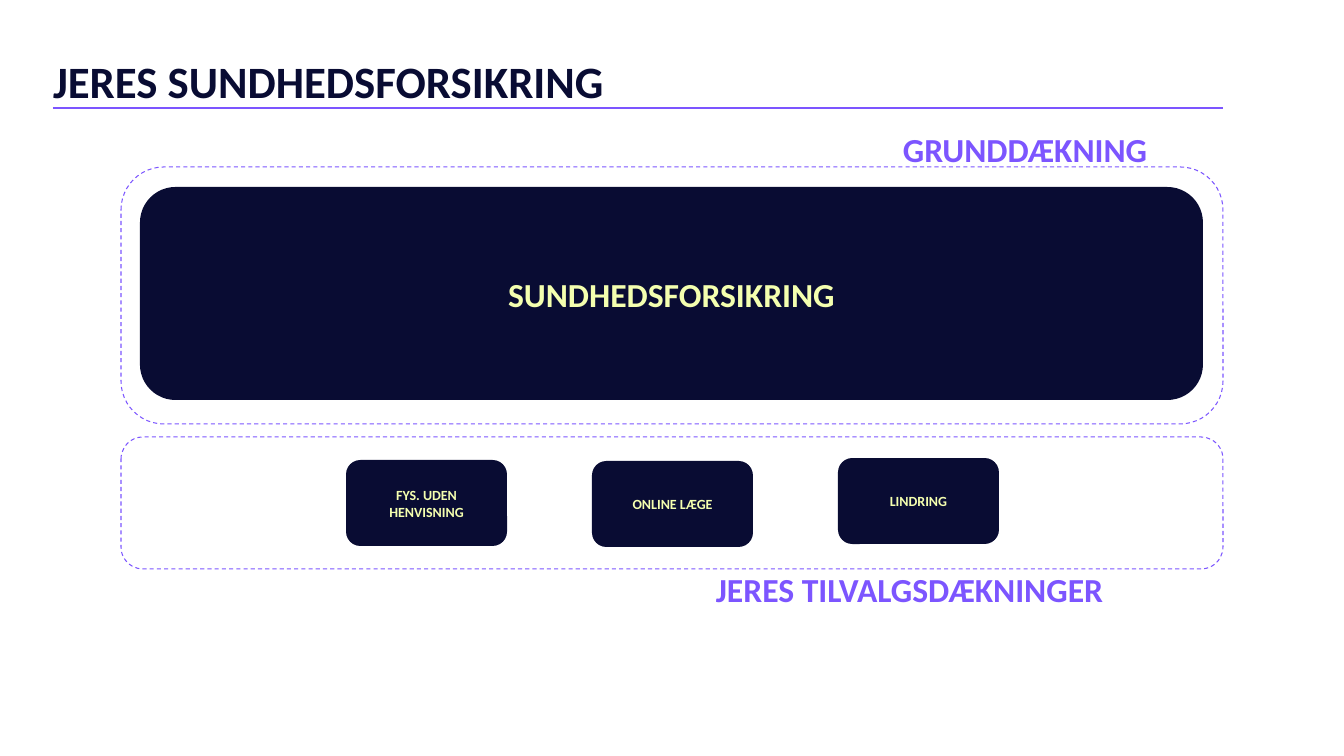
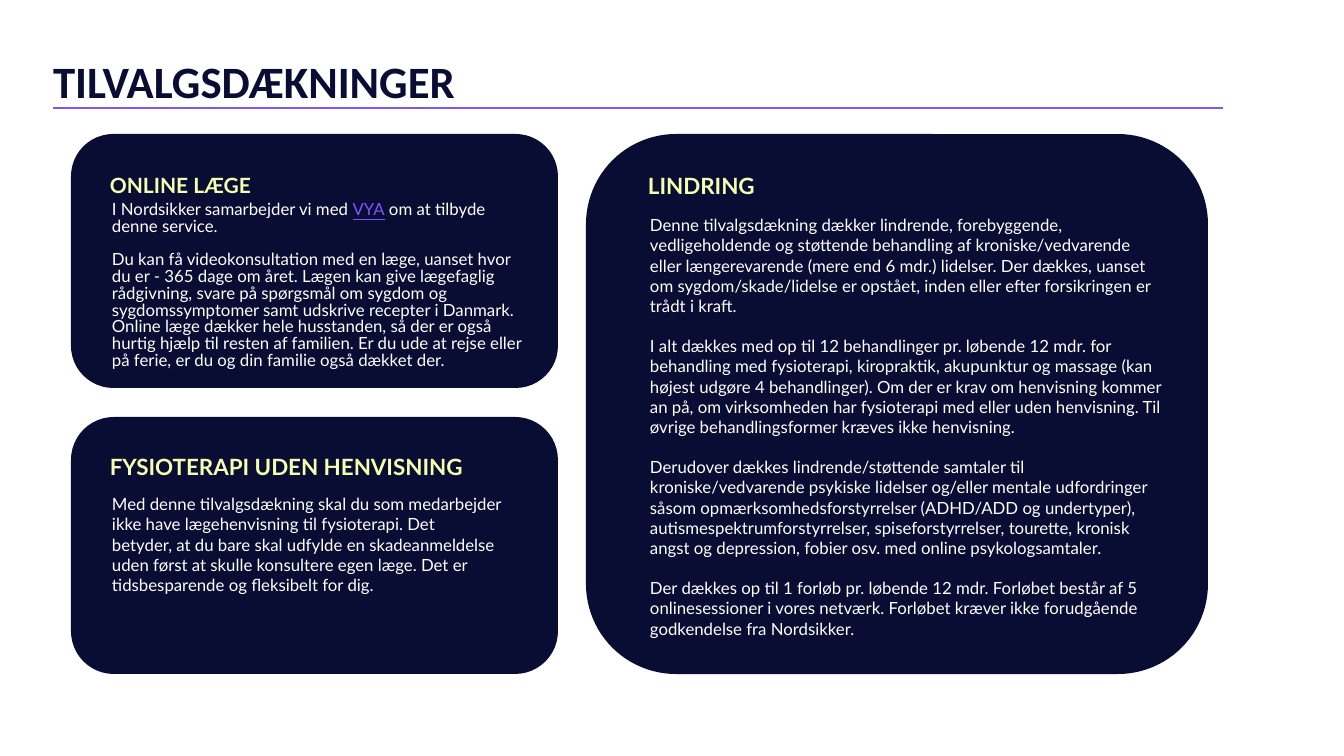
from lxml import etree
from pptx import Presentation
from pptx.dml.color import RGBColor
from pptx.enum import dml, shapes, text
from pptx.oxml import ns
from pptx.util import Emu, Pt

COLORS = {
    "navy": "090C33",
    "violet": "7C55FF",
    "lime": "F4FFAF",
    "white": "FFFFFF",
}
SCALE = 12192000 / 1344


def px(length):
    return Emu(round(length * SCALE))


def color(name):
    return RGBColor.from_string(COLORS[name])


class Deck:
    def __init__(self):
        self.presentation = Presentation()
        self.presentation.slide_width = px(1344)
        self.presentation.slide_height = px(756)
        self.slide = None

    def new_slide(self, title):
        layout = self.presentation.slide_layouts[5]
        self.slide = self.presentation.slides.add_slide(layout)
        shape = self.slide.shapes.title
        shape.left, shape.top, shape.width, shape.height = map(px, (53, 0, 1123, 108))
        self.set_text(shape, [title], 32, "navy", bold=True,
                      anchor=text.MSO_ANCHOR.BOTTOM, margin=0)
        self.rule(53, 1223, 108)

    def rule(self, left, right, top):
        line = self.slide.shapes.add_connector(
            shapes.MSO_CONNECTOR.STRAIGHT, px(left), px(top), px(right), px(top))
        line.line.color.rgb = color("violet")
        line.line.width = Pt(1.5)
        etree.SubElement(line._element.spPr, ns.qn("a:effectLst"))

    def rounded(self, box):
        shape = self.slide.shapes.add_shape(
            shapes.MSO_SHAPE.ROUNDED_RECTANGLE, *map(px, box))
        shape.shadow.inherit = False
        return shape

    def card(self, box, label=None, size=10):
        shape = self.rounded(box)
        shape.fill.solid()
        shape.fill.fore_color.rgb = color("navy")
        shape.line.fill.background()
        if label:
            self.set_text(shape, [label], size, "lime", bold=True, margin=16,
                          align=text.PP_ALIGN.CENTER, anchor=text.MSO_ANCHOR.MIDDLE)

    def frame(self, box):
        shape = self.rounded(box)
        shape.fill.background()
        shape.line.color.rgb = color("violet")
        shape.line.width = Pt(0.75)
        shape.line.dash_style = dml.MSO_LINE.DASH

    def text_box(self, box, paragraphs, size, color_name, **style):
        shape = self.slide.shapes.add_textbox(*map(px, box))
        self.set_text(shape, paragraphs, size, color_name, **style)

    def heading(self, box, label, size=16):
        self.text_box(box, [label], size, "lime", font="Lato", bold=True)

    def body(self, box, paragraphs, spacing=1.0, gap=14.4):
        self.text_box(box, paragraphs, 12, "white", font="Lato", margin=0,
                      spacing=spacing, gap=gap)

    def set_text(self, shape, paragraphs, size, color_name, font="Calibri", bold=False,
                 align=text.PP_ALIGN.LEFT, anchor=text.MSO_ANCHOR.TOP, margin=None,
                 spacing=1.01, gap=0):
        frame = shape.text_frame
        frame.word_wrap = True
        frame.auto_size = text.MSO_AUTO_SIZE.NONE
        frame.vertical_anchor = anchor
        if margin is not None:
            frame.margin_left = frame.margin_right = px(margin)
            frame.margin_top = frame.margin_bottom = 0
        for index, content in enumerate(paragraphs):
            paragraph = frame.add_paragraph() if index else frame.paragraphs[0]
            paragraph.alignment = align
            paragraph.line_spacing = spacing
            if index:
                paragraph.space_before = Pt(gap)
            paragraph.font.name = font
            paragraph.font.size = Pt(size)
            paragraph.font.bold = bold
            paragraph.font.color.rgb = color(color_name)
            if isinstance(content, str):
                paragraph.text = content
            else:
                self.add_marked(paragraph, *content)

    def add_marked(self, paragraph, before, marked, after):
        for words in (before, marked, after):
            run = paragraph.add_run()
            run.text = words
            if words == marked:
                run.font.color.rgb = color("violet")
                run.font.underline = True


def insurance_slide(deck):
    deck.new_slide("JERES SUNDHEDSFORSIKRING")
    deck.card((140, 187, 1063, 213), "SUNDHEDSFORSIKRING", 24)
    options = (("FYS. UDEN HENVISNING", 460), ("ONLINE LÆGE", 461), ("LINDRING", 458))
    for column, (label, top) in enumerate(options):
        deck.card((346 + 246 * column, top, 161, 86), label)
    captions = (("JERES TILVALGSDÆKNINGER", (706, 564, 517, 38)),
                ("GRUNDDÆKNING", (893, 124, 302, 56)))
    for caption, box in captions:
        deck.text_box(box, [caption], 24, "violet", bold=True)
    deck.frame((121, 167, 1102, 257))
    deck.frame((121, 437, 1102, 132))


def options_slide(deck):
    deck.new_slide("TILVALGSDÆKNINGER")
    for box in ((71, 134, 487, 254), (71, 417, 487, 257), (586, 134, 622, 540)):
        deck.card(box)

    deck.heading((100, 167, 472, 34), "ONLINE LÆGE", 15)
    deck.body((112, 202, 414, 190), [
        ("I Nordsikker samarbejder vi med ", "VYA", " om at tilbyde denne service."),
        "Du kan få videokonsultation med en læge, uanset hvor du er - 365 dage om året. "
        "Lægen kan give lægefaglig rådgivning, svare på spørgsmål om sygdom og "
        "sygdomssymptomer samt udskrive recepter i Danmark. Online læge dækker hele "
        "husstanden, så der er også hurtig hjælp til resten af familien. Er du ude at "
        "rejse eller på ferie, er du og din familie også dækket der.",
    ], spacing=Pt(12), gap=12)

    deck.heading((100, 448, 407, 34), "FYSIOTERAPI UDEN HENVISNING")
    deck.body((112, 494, 445, 102), [
        "Med denne tilvalgsdækning skal du som medarbejder\v"
        "ikke have lægehenvisning til fysioterapi. Det\v"
        "betyder, at du bare skal udfylde en skadeanmeldelse\v"
        "uden først at skulle konsultere egen læge. Det er tidsbesparende og fleksibelt "
        "for dig.",
    ])

    deck.heading((638, 167, 323, 34), "LINDRING")
    deck.body((650, 215, 513, 448), [
        "Denne tilvalgsdækning dækker lindrende, forebyggende, vedligeholdende og "
        "støttende behandling af kroniske/vedvarende eller længerevarende (mere end "
        "6 mdr.) lidelser. Der dækkes, uanset om sygdom/skade/lidelse er opstået, inden "
        "eller efter forsikringen er trådt i kraft.",
        "I alt dækkes med op til 12 behandlinger pr. løbende 12 mdr. for behandling med "
        "fysioterapi, kiropraktik, akupunktur og massage (kan højest udgøre "
        "4 behandlinger). Om der er krav om henvisning kommer an på, om virksomheden har "
        "fysioterapi med eller uden henvisning. Til øvrige behandlingsformer kræves ikke "
        "henvisning.",
        "Derudover dækkes lindrende/støttende samtaler til kroniske/vedvarende psykiske "
        "lidelser og/eller mentale udfordringer såsom opmærksomhedsforstyrrelser "
        "(ADHD/ADD og undertyper), autismespektrumforstyrrelser, spiseforstyrrelser, "
        "tourette, kronisk angst og depression, fobier osv. med online psykologsamtaler.",
        "Der dækkes op til 1 forløb pr. løbende 12 mdr. Forløbet består af 5 "
        "onlinesessioner i vores netværk. Forløbet kræver ikke forudgående godkendelse "
        "fra Nordsikker.",
    ])


def main():
    deck = Deck()
    insurance_slide(deck)
    options_slide(deck)
    deck.presentation.save("out.pptx")


if __name__ == "__main__":
    main()
